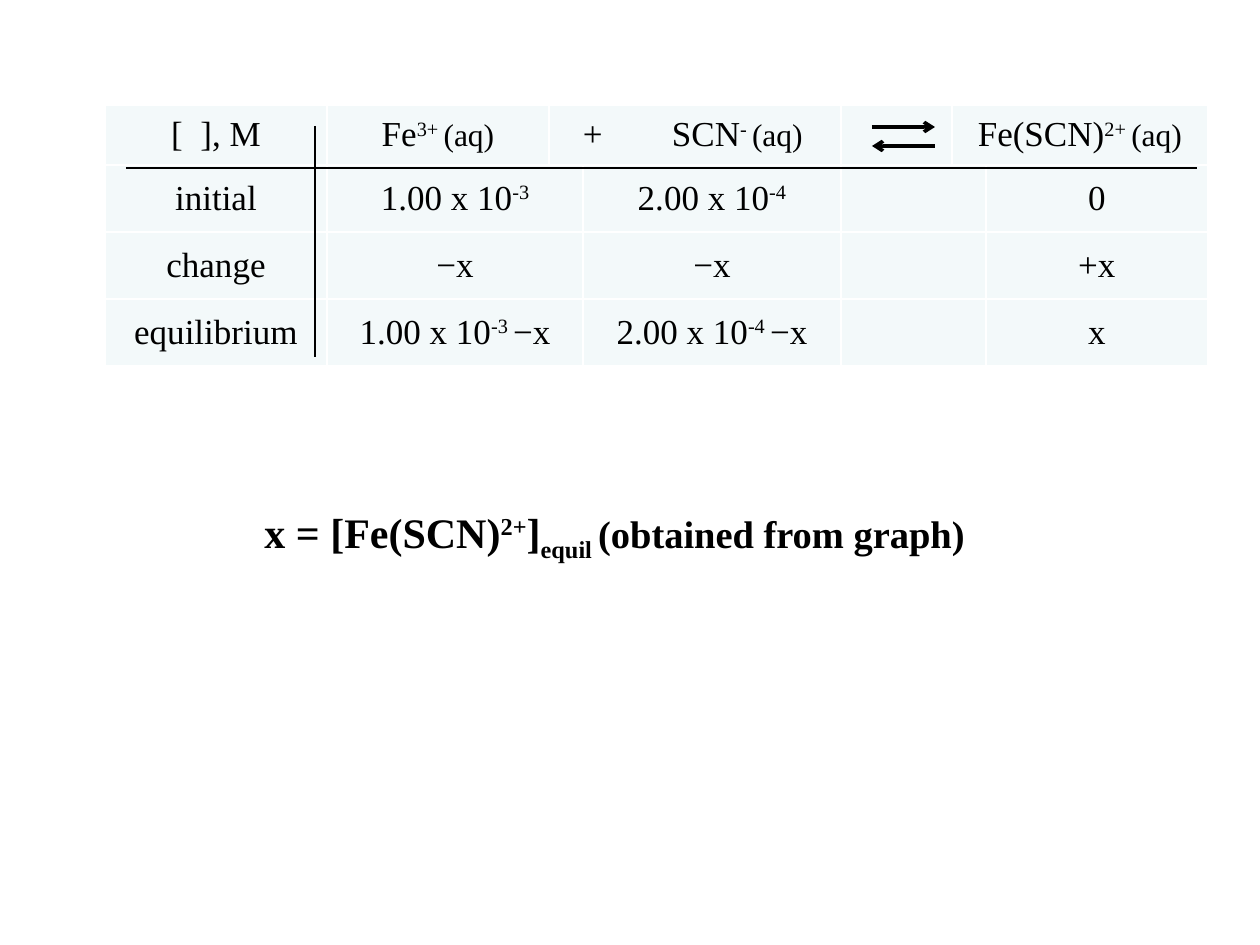
from lxml import etree
from pptx import Presentation
from pptx import util as u
from pptx.dml.color import RGBColor
from pptx.enum import shapes, text
from pptx.oxml import ns

PX = u.Inches(1) // 126
FONT = "Times New Roman"
COLORS = {"ink": "000000", "cell": "F3F9FA", "border": "FFFFFF"}
SUPER, SUB = 30, -25

# Table grid and content; a span is (text, size, baseline)
COLUMNS = [222, 222, 34, 258, 111, 34, 222]
ROWS = [60, 67, 67, 67]
HEADER_MERGES = [(2, 3), (5, 6)]
BODY_MERGES = [(1, 2), (4, 5)]
AQ = ("(aq)", 18, 0)


def plain(words):
    return [(words, 20, 0)]


def raised(base, exponent, *rest):
    return [(base, 20, 0), (exponent, 20, SUPER), *rest]


MINUS_X = ("−x", 20, 0)
CELLS = [
    {0: plain("[  ], M"), 1: raised("Fe", "3+ ", AQ),
     2: raised("+\tSCN", "- ", AQ), 5: raised("Fe(SCN)", "2+ ", AQ)},
    {0: plain("initial"), 1: raised("1.00 x 10", "-3"),
     3: raised("2.00 x 10", "-4"), 6: plain("0")},
    {0: plain("change"), 1: plain("−x"), 3: plain("−x"), 6: plain("+x")},
    {0: plain("equilibrium"), 1: raised("1.00 x 10", "-3 ", MINUS_X),
     3: raised("2.00 x 10", "-4 ", MINUS_X), 6: plain("x")},
]
NOTE = [("x = [Fe(SCN)", 24, 0), ("2+", 24, SUPER), ("]", 24, 0),
        ("equil ", 24, SUB), ("(obtained from graph)", 22, 0)]


def color(name):
    return RGBColor.from_string(COLORS[name])


def write_spans(para, spans, bold=False):
    for words, size, baseline in spans:
        span = para.add_run()
        span.text = words
        font = span.font
        font.name, font.size, font.bold = FONT, u.Pt(size), bold
        font.color.rgb = color("ink")
        if baseline:
            span._r.get_or_add_rPr().set("baseline", str(baseline * 1000))


def style_cell(cell):
    cell.fill.solid()
    cell.fill.fore_color.rgb = color("cell")
    cell.vertical_anchor = text.MSO_ANCHOR.MIDDLE
    cell.margin_left = cell.margin_right = 9 * PX
    cell.margin_top = cell.margin_bottom = 0
    properties = cell._tc.get_or_add_tcPr()
    for index, side in enumerate(("lnL", "lnR", "lnT", "lnB")):
        line = etree.Element(ns.qn("a:" + side), w=str(u.Pt(1)))
        fill = etree.SubElement(line, ns.qn("a:solidFill"))
        etree.SubElement(fill, ns.qn("a:srgbClr"), val=COLORS["border"])
        properties.insert(index, line)


def set_tab(cell, margin, stop):
    """Left-align the cell at margin, with one tab stop measured from there."""
    cell.margin_left = margin * PX
    para = cell.text_frame.paragraphs[0]
    para.alignment = text.PP_ALIGN.LEFT
    tabs = etree.SubElement(para._p.get_or_add_pPr(), ns.qn("a:tabLst"))
    etree.SubElement(tabs, ns.qn("a:tab"), pos=str(stop * PX), algn="l")


def add_concentrations(page, left, top):
    frame = page.shapes.add_table(len(ROWS), len(COLUMNS), left * PX, top * PX,
                                  sum(COLUMNS) * PX, sum(ROWS) * PX)
    table = frame.table
    table.first_row = table.horz_banding = False
    for column, width in zip(table.columns, COLUMNS):
        column.width = width * PX
    for r, height in enumerate(ROWS):
        table.rows[r].height = height * PX
        for c in range(len(COLUMNS)):
            cell = table.cell(r, c)
            style_cell(cell)
            para = cell.text_frame.paragraphs[0]
            para.alignment = text.PP_ALIGN.CENTER
            write_spans(para, CELLS[r].get(c, []))
        for first, last in BODY_MERGES if r else HEADER_MERGES:
            table.cell(r, first).merge(table.cell(r, last))
    set_tab(table.cell(0, 2), 34, 89)


def add_line(page, x1, y1, x2, y2, weight=0.75, arrow=False):
    line = page.shapes.add_connector(shapes.MSO_CONNECTOR.STRAIGHT,
                                     x1 * PX, y1 * PX, x2 * PX, y2 * PX)
    line.line.width = u.Pt(weight)
    line.line.color.rgb = color("ink")
    if arrow:
        etree.SubElement(line.line._get_or_add_ln(), ns.qn("a:tailEnd"), type="arrow")
    etree.SubElement(line._element.spPr, ns.qn("a:effectLst"))


def add_note(page, left, top, width, height):
    box = page.shapes.add_textbox(left * PX, top * PX, width * PX, height * PX)
    frame = box.text_frame
    frame.word_wrap = True
    frame.auto_size = text.MSO_AUTO_SIZE.SHAPE_TO_FIT_TEXT
    write_spans(frame.paragraphs[0], NOTE, bold=True)


def main():
    deck = Presentation()
    deck.slide_width, deck.slide_height = 1260 * PX, 945 * PX
    page = deck.slides.add_slide(deck.slide_layouts[6])

    add_concentrations(page, 105, 105)

    # Equilibrium arrows
    add_line(page, 872, 127, 935, 127, 2, arrow=True)
    add_line(page, 935, 146, 872, 146, 2, arrow=True)

    # Rules beside the row names and below the header
    add_line(page, 126, 168, 1197, 168)
    add_line(page, 315, 126, 315, 357)

    add_note(page, 252, 500, 777, 64)
    deck.save("out.pptx")


if __name__ == "__main__":
    main()
